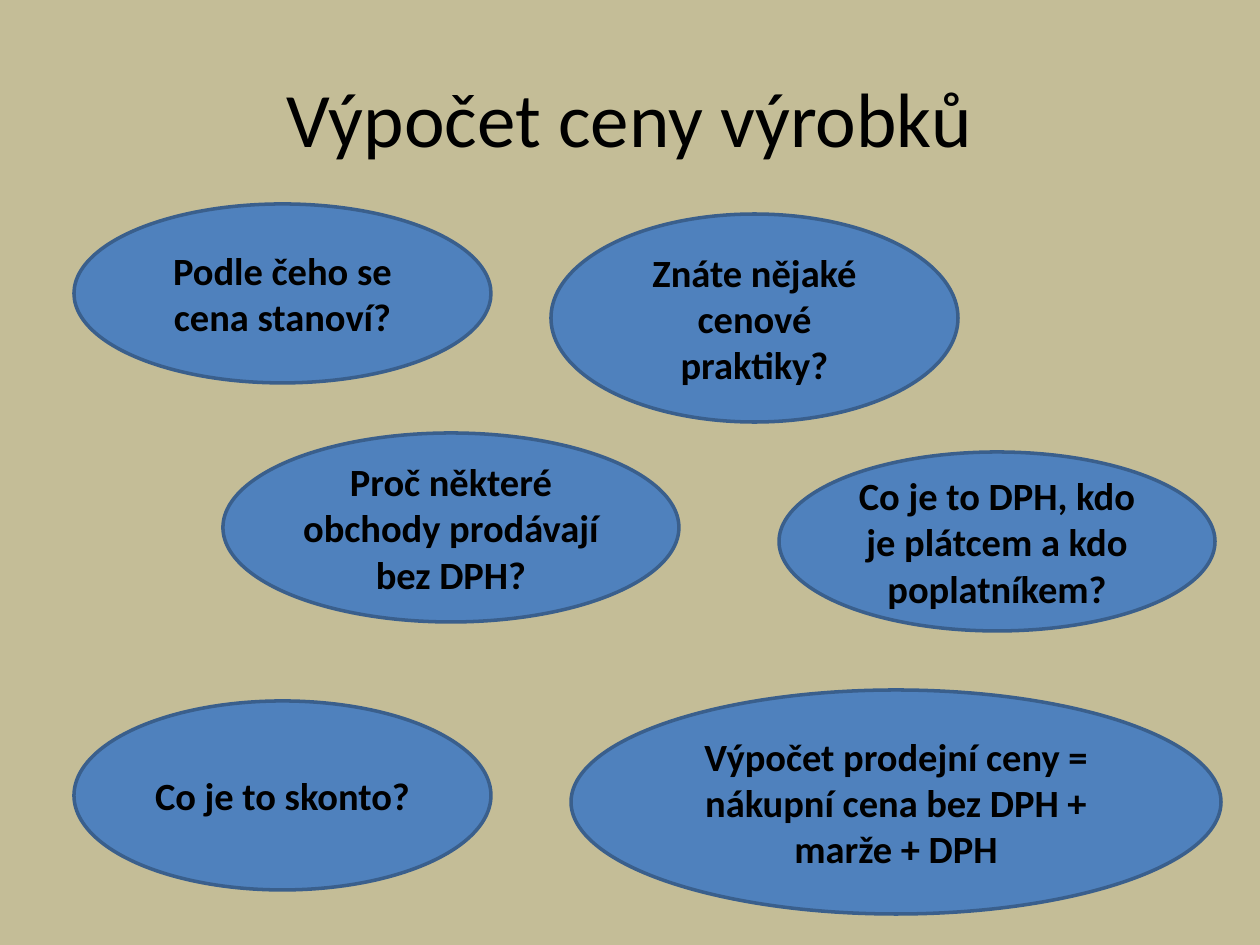
from pptx import Presentation
from pptx.dml.color import RGBColor
from pptx.enum.shapes import MSO_SHAPE
from pptx.enum.text import MSO_ANCHOR, PP_ALIGN
from pptx.util import Emu, Pt

SAND = RGBColor(0xC4, 0xBD, 0x97)
BLUE = RGBColor(0x4F, 0x81, 0xBD)
NAVY = RGBColor(0x3A, 0x5F, 0x8C)
BLACK = RGBColor(0, 0, 0)

PX_PER_INCH = 126
WIDTH, HEIGHT = 1260, 945

QUESTIONS = [
    ("Podle čeho se cena stanoví?", (74, 204, 417, 179)),
    ("Znáte nějaké cenové praktiky?", (551, 214, 407, 208)),
    ("Proč některé obchody prodávají bez DPH?", (223, 433, 456, 189)),
    ("Co je to DPH, kdo je plátcem a kdo poplatníkem?", (779, 452, 436, 179)),
    ("Co je to skonto?", (74, 701, 417, 189)),
    ("Výpočet prodejní ceny = nákupní cena bez DPH + marže + DPH",
     (571, 690, 650, 224)),
]


def px(length):
    return Emu(round(length * 914400 / PX_PER_INCH))


def write(shape, text, size=22, bold=False, color=BLACK, font="Calibri"):
    """Put one centred, formatted paragraph in the middle of a shape."""
    frame = shape.text_frame
    frame.word_wrap = True
    frame.vertical_anchor = MSO_ANCHOR.MIDDLE
    para = frame.paragraphs[0]
    para.alignment = PP_ALIGN.CENTER
    run = para.add_run()
    run.text = text
    run.font.name = font
    run.font.size = Pt(size)
    run.font.bold = bold
    run.font.color.rgb = color


class Board:
    """Holds the bubble style and the current slide."""

    def __init__(self, slide, fill=BLUE, edge=NAVY, weight=2):
        self.slide = slide
        self.fill, self.edge, self.weight = fill, edge, weight

    def ground(self, color):
        back = self.slide.background.fill
        back.solid()
        back.fore_color.rgb = color

    def title(self, text, box):
        title = self.slide.shapes.title
        title.left, title.top, title.width, title.height = map(px, box)
        write(title, text, size=44)

    def bubble(self, text, box):
        oval = self.slide.shapes.add_shape(MSO_SHAPE.OVAL, *map(px, box))
        oval.shadow.inherit = False
        oval.fill.solid()
        oval.fill.fore_color.rgb = self.fill
        oval.line.color.rgb = self.edge
        oval.line.width = Pt(self.weight)
        write(oval, text, bold=True)


def main():
    deck = Presentation()
    deck.slide_width, deck.slide_height = px(WIDTH), px(HEIGHT)
    board = Board(deck.slides.add_slide(deck.slide_layouts[5]))
    board.ground(SAND)
    board.title("Výpočet ceny výrobků", (63, 38, 1134, 158))
    for text, box in QUESTIONS:
        board.bubble(text, box)
    deck.save("out.pptx")


if __name__ == "__main__":
    main()
